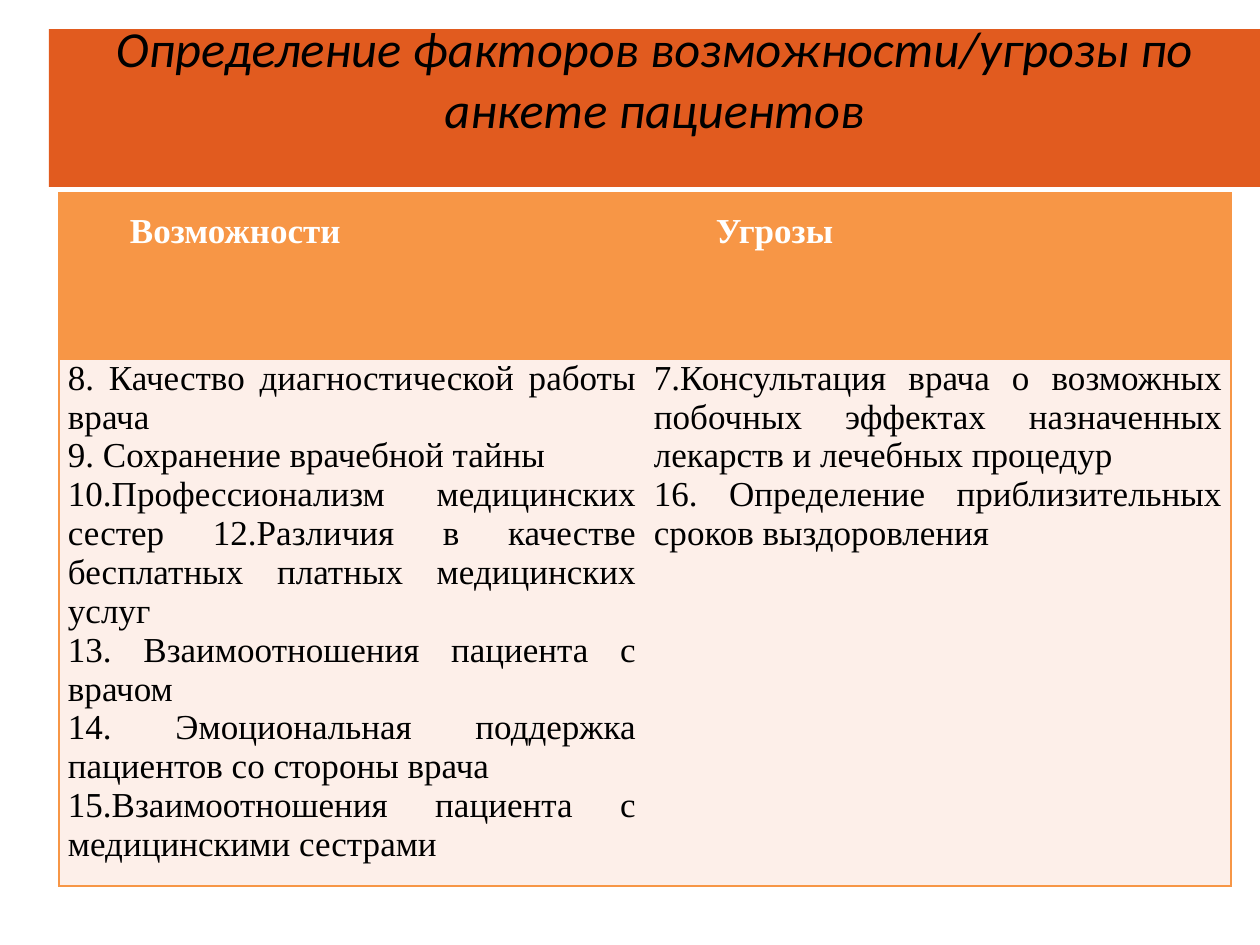
from dataclasses import dataclass

from lxml import etree
from pptx import Presentation
from pptx import util as u
from pptx.dml.color import RGBColor
from pptx.enum import shapes, text
from pptx.oxml.ns import qn


@dataclass(frozen=True)
class Theme:
    banner: str = "E15B1F"
    head: str = "F79646"
    body: str = "FDEFE9"
    ink: str = "000000"
    white: str = "FFFFFF"
    title: float = 28.8
    cell: float = 20
    sans: str = "Calibri"
    serif: str = "Times New Roman"


def px(n):
    return u.Emu(round(n * 914400 / 126))


def put(obj, vals):
    for key, val in vals.items():
        setattr(obj, key, val)


class Deck:
    def __init__(self, theme, wide, high):
        self.theme = theme
        self.prs = Presentation()
        put(self.prs, {"slide_width": px(wide), "slide_height": px(high)})
        self.slide = self.prs.slides.add_slide(self.prs.slide_layouts[6])

    def fill(self, obj, color):
        obj.fill.solid()
        obj.fill.fore_color.rgb = RGBColor.from_string(color)

    def label(self, par, words, color, font, form):
        put(par, form)
        run = par.add_run()
        run.text = words
        put(run.font, font)
        run.font.color.rgb = RGBColor.from_string(color)

    def banner(self, box, words):
        t = self.theme
        rect = self.slide.shapes.add_shape(
            shapes.MSO_SHAPE.RECTANGLE, *map(px, box))
        rect.shadow.inherit = False
        self.fill(rect, t.banner)
        rect.line.fill.background()
        frame = rect.text_frame
        put(frame, {"word_wrap": True,
                    "vertical_anchor": text.MSO_ANCHOR.MIDDLE})
        par = frame.paragraphs[0]
        font = {"name": t.sans, "size": u.Pt(t.title),
                "italic": True, "bold": False}
        self.label(par, words, t.ink, font,
                   {"alignment": text.PP_ALIGN.CENTER})
        par.add_line_break()
        etree.SubElement(par._p, qn("a:endParaRPr"),
                         sz=str(round(t.title * 100)))

    def edge(self, cell, sides):
        props = cell._tc.get_or_add_tcPr()
        for side in "LRTB":
            line = etree.SubElement(props, qn("a:ln" + side), w="12700")
            if side in sides:
                solid = etree.SubElement(line, qn("a:solidFill"))
                etree.SubElement(solid, qn("a:srgbClr"), val=self.theme.head)
            else:
                etree.SubElement(line, qn("a:noFill"))

    def cell(self, cell, lines, top, sides):
        t = self.theme
        self.edge(cell, sides)
        self.fill(cell, t.head if top else t.body)
        put(cell, {"margin_left": px(9), "margin_right": px(9),
                   "margin_top": 0, "margin_bottom": 0})
        font = {"name": t.serif, "size": u.Pt(t.cell), "bold": top}
        form = {"alignment": text.PP_ALIGN.JUSTIFY,
                "line_spacing": 1.5 if top else 1.0}
        frame = cell.text_frame
        for i, words in enumerate(lines):
            par = frame.add_paragraph() if i else frame.paragraphs[0]
            if top:
                par._p.get_or_add_pPr().set("indent", str(px(62)))
            self.label(par, words, t.white if top else t.ink, font, form)

    def table(self, box, highs, rows):
        count = len(rows[0])
        grid = self.slide.shapes.add_table(
            len(rows), count, *map(px, box)).table
        put(grid, {"first_row": False, "horz_banding": False})
        for row, high in zip(grid.rows, highs):
            row.height = px(high)
        for col in grid.columns:
            col.width = px(box[2] // count)
        for r, row in enumerate(rows):
            for c, lines in enumerate(row):
                sides = "TB" + ("L" if c == 0 else "")
                sides += "R" if c == count - 1 else ""
                self.cell(grid.cell(r, c), lines, r == 0, sides)


ROWS = [
    [["Возможности"], ["Угрозы"]],
    [
        [
            "8. Качество диагностической работы врача",
            "9. Сохранение врачебной тайны",
            "10.Профессионализм медицинских сестер 12.Различия в качестве "
            "бесплатных платных медицинских услуг",
            "13. Взаимоотношения пациента с врачом",
            "14. Эмоциональная поддержка пациентов со стороны врача",
            "15.Взаимоотношения пациента с медицинскими сестрами",
        ],
        [
            "7.Консультация врача о возможных побочных эффектах "
            "назначенных лекарств и лечебных процедур",
            "16. Определение приблизительных сроков выздоровления",
        ],
    ],
]


def main():
    deck = Deck(Theme(), 1260, 945)
    deck.banner((49, 29, 1211, 158),
                "Определение факторов возможности/угрозы по анкете пациентов")
    deck.table((59, 193, 1172, 693), (166, 527), ROWS)
    deck.prs.save("out.pptx")


if __name__ == "__main__":
    main()
